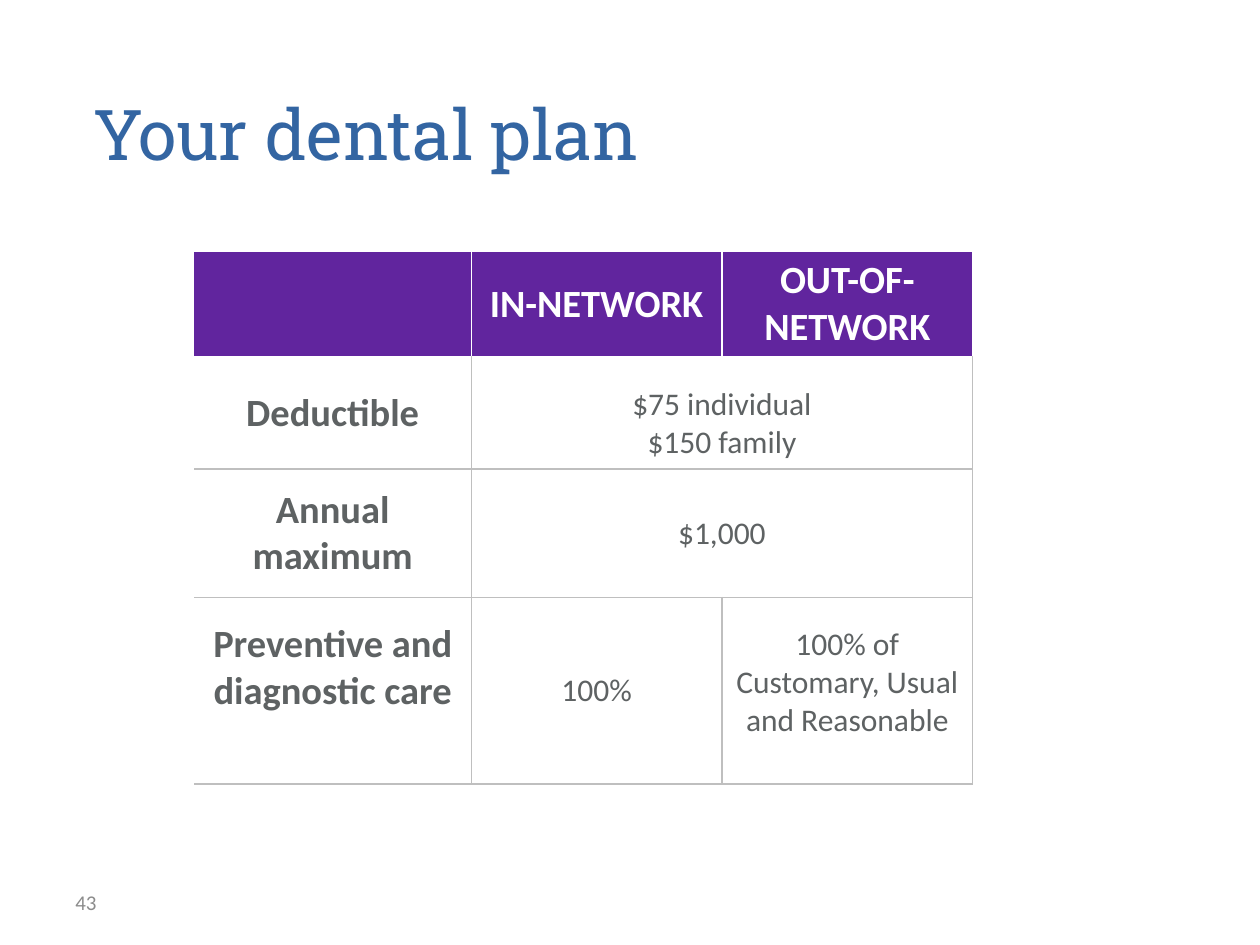
from lxml.etree import SubElement
from pptx import Presentation
from pptx.dml.color import RGBColor
from pptx.enum.text import MSO_ANCHOR, PP_ALIGN
from pptx.oxml.ns import qn
from pptx.util import Inches, Pt

PURPLE, WHITE, GREY, TEXT = "61259E", "FFFFFF", "BFBFBF", "5E6263"


def style(paragraph, size, color, name="Calibri", bold=False):
    paragraph.font.size = Pt(size)
    paragraph.font.name = name
    paragraph.font.bold = bold
    paragraph.font.color.rgb = RGBColor.from_string(color)


def add_border(cell, side, color):
    line = SubElement(cell._tc.get_or_add_tcPr(), qn(f"a:ln{side}"), w=str(Pt(1)))
    if color:
        fill = SubElement(line, qn("a:solidFill"))
        SubElement(fill, qn("a:srgbClr"), val=color)
    else:
        SubElement(line, qn("a:noFill"))


presentation = Presentation()
presentation.slide_width, presentation.slide_height = Inches(10), Inches(7.5)
slide = presentation.slides.add_slide(presentation.slide_layouts[5])

title = slide.shapes.title
title.left, title.top, title.width, title.height = map(Inches, (0.64, 0.67, 7.79, 0.94))
title.text_frame.text = "Your dental plan"
title.text_frame.vertical_anchor = MSO_ANCHOR.TOP
title.text_frame.paragraphs[0].alignment = PP_ALIGN.LEFT
style(title.text_frame.paragraphs[0], 40, "3365A2", "Roboto Slab")

rows = [
    ["", "IN-NETWORK", "OUT-OF-NETWORK"],
    ["Deductible", "$75 individual\n$150 family", ""],
    ["Annual maximum", "$1,000", ""],
    ["Preventive and diagnostic care", "100%", "100% of Customary, Usual and Reasonable"],
]
column_widths = [2.2, 1.99, 1.99]
row_heights = [0.83, 0.89, 1.02, 1.48]
top_margins = {(1, 1): 0.22}
bottom_margins = {(3, 0): 0.41, (3, 2): 0.18}

table = slide.shapes.add_table(
    len(rows), len(column_widths), Inches(1.54), Inches(1.99),
    Inches(sum(column_widths)), Inches(sum(row_heights)),
).table
table.horz_banding = False
for column, width in zip(table.columns, column_widths):
    column.width = Inches(width)
for row, height in zip(table.rows, row_heights):
    row.height = Inches(height)

for row_index, texts in enumerate(rows):
    header = row_index == 0
    for column_index, text in enumerate(texts):
        cell = table.cell(row_index, column_index)
        cell.text = text
        cell.vertical_anchor = MSO_ANCHOR.MIDDLE
        cell.margin_left = cell.margin_right = Inches(0.09)
        cell.margin_top = Inches(top_margins.get((row_index, column_index), 0.05))
        cell.margin_bottom = Inches(bottom_margins.get((row_index, column_index), 0.05))
        label = header or column_index == 0
        for paragraph in cell.text_frame.paragraphs:
            paragraph.alignment = PP_ALIGN.CENTER
            style(paragraph, 22 if label else 18, WHITE if header else TEXT, bold=label)
        color = WHITE if header else GREY
        add_border(cell, "L", color if column_index else None)
        add_border(cell, "R", color)
        add_border(cell, "T", WHITE if row_index < 2 else GREY)
        add_border(cell, "B", color)
        if header:
            cell.fill.solid()
            cell.fill.fore_color.rgb = RGBColor.from_string(PURPLE)
        else:
            cell.fill.background()

for row_index in (1, 2):
    table.cell(row_index, 1).merge(table.cell(row_index, 2))

number = slide.shapes.add_textbox(Inches(0.5), Inches(6.96), Inches(2.33), Inches(0.4))
number.text_frame.word_wrap = True
number.text_frame.vertical_anchor = MSO_ANCHOR.MIDDLE
number.text_frame.text = "43"
style(number.text_frame.paragraphs[0], 12, "8C8C8C")

presentation.save("out.pptx")
